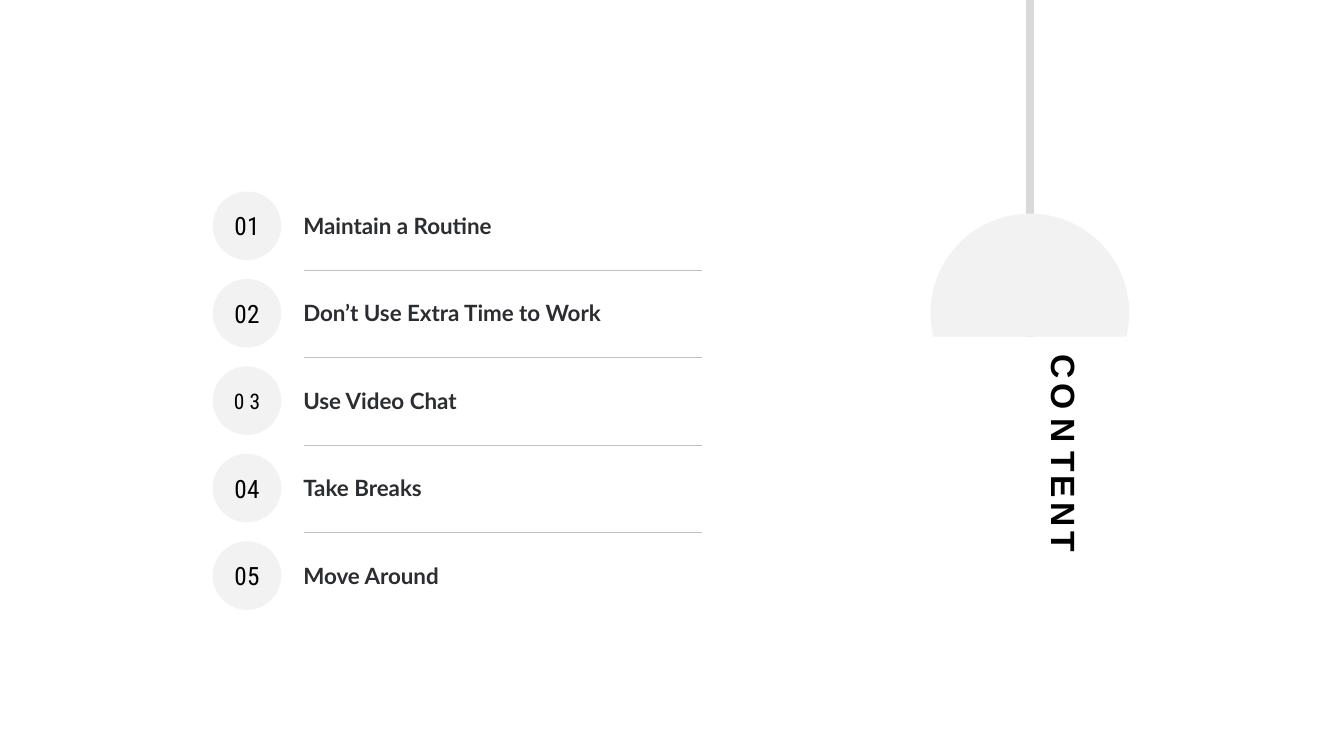
import math
from dataclasses import dataclass

import pptx
import pptx.dml.color
import pptx.enum.shapes
import pptx.enum.text
import pptx.oxml.ns
import pptx.util
from lxml import etree

Inches = pptx.util.Inches
Pt = pptx.util.Pt
RGBColor = pptx.dml.color.RGBColor
Shape = pptx.enum.shapes.MSO_SHAPE
Align = pptx.enum.text.PP_ALIGN
Anchor = pptx.enum.text.MSO_ANCHOR
Fit = pptx.enum.text.MSO_AUTO_SIZE

BLACK = RGBColor(0x00, 0x00, 0x00)
INK = RGBColor(0x2C, 0x2D, 0x30)
PALE = RGBColor(0xF2, 0xF2, 0xF2)
ROD = RGBColor(0xD9, 0xD9, 0xD9)
RULE = RGBColor(0xBF, 0xBF, 0xBF)

TOP = 1.9
PITCH = (5.37 - TOP) / 4
DISC = 0.68
LAMP_X, LAMP_TOP, LAMP_D, LAMP_END = 9.23, 2.12, 1.97, 3.34

HEAD = {"name": "Arial", "size": Pt(24), "bold": True}
LABEL = {"name": "Lato", "size": Pt(16), "bold": True}


@dataclass
class Item:
    num: tuple[str, str]
    text: str
    size: float = 18


ITEMS = [
    Item(("0", "1"), "Maintain a Routine"),
    Item(("0", "2"), "Don’t Use Extra Time to Work"),
    Item(("0 ", "3"), "Use Video Chat", 15.3),
    Item(("0", "4"), "Take Breaks"),
    Item(("0", "5"), "Move Around"),
]


def add_run(para, text: str, style: dict, color: RGBColor, gap: int = 0) -> None:
    run = para.add_run()
    run.text = text
    for key, value in style.items():
        setattr(run.font, key, value)
    run.font.color.rgb = color
    if gap:
        run.font._element.set("spc", str(gap))


def add_parts(para, parts: tuple, style: dict, gap: int = 0) -> None:
    """Set the parts in one line with a hair space of 1 pt between them."""
    for spot, part in enumerate(parts):
        if spot:
            add_run(para, " ", style | {"size": Pt(1)}, BLACK, gap)
        add_run(para, part, style, BLACK, gap)


def add_form(slide, kind, left: float, top: float, width: float,
             height: float, color: RGBColor):
    form = slide.shapes.add_shape(
        kind, Inches(left), Inches(top), Inches(width), Inches(height))
    form.shadow.inherit = False
    form.fill.solid()
    form.fill.fore_color.rgb = color
    form.line.fill.background()
    return form


def add_lamp(slide) -> None:
    mid = LAMP_X + LAMP_D / 2
    add_form(slide, Shape.RECTANGLE, mid - 0.04, 0, 0.08, LAMP_END, ROD)
    shade = add_form(slide, Shape.CHORD, LAMP_X, LAMP_TOP, LAMP_D, LAMP_D, PALE)
    # Level cut: angles in 60000ths of a degree, adjustments in 100000ths
    drop = LAMP_END - LAMP_TOP - LAMP_D / 2
    dip = math.degrees(math.asin(drop / (LAMP_D / 2)))
    for spot, turn in enumerate((180 - dip, dip)):
        shade.adjustments[spot] = turn * 0.6


def add_title(slide) -> None:
    title = slide.shapes.title
    place = {"left": 10.25, "top": 3.47, "width": 0.61, "height": 2.16}
    for key, value in place.items():
        setattr(title, key, Inches(value))
    frame = title.text_frame
    for key, value in {"auto_size": Fit.NONE, "word_wrap": True,
                       "vertical_anchor": Anchor.TOP}.items():
        setattr(frame, key, value)
    frame._txBody.bodyPr.set("vert", "eaVert")
    para = frame.paragraphs[0]
    para.alignment = Align.LEFT
    add_parts(para, ("CO", "N", "TENT"), HEAD, 300)


def add_item(slide, item: Item, top: float) -> None:
    disc = add_form(slide, Shape.OVAL, 2.11, top, DISC, DISC, PALE)
    frame = disc.text_frame
    frame.word_wrap = False
    frame.vertical_anchor = Anchor.MIDDLE
    para = frame.paragraphs[0]
    para.alignment = Align.CENTER
    add_parts(para, item.num, {"name": "Roboto Condensed", "size": Pt(item.size)})

    box = slide.shapes.add_textbox(
        Inches(2.91), Inches(top + 0.1), Inches(5.09), Inches(0.49))
    box.text_frame.word_wrap = True
    para = box.text_frame.paragraphs[0]
    para.line_spacing = 1.2
    add_run(para, item.text, LABEL, INK)


def add_rule(slide, y: float) -> None:
    rule = slide.shapes.add_connector(
        pptx.enum.shapes.MSO_CONNECTOR.STRAIGHT,
        Inches(3.02), Inches(y), Inches(6.96), Inches(y))
    rule.line.color.rgb = RULE
    rule.line.width = Pt(0.25)
    etree.SubElement(rule._element.spPr, pptx.oxml.ns.qn("a:effectLst"))


def main() -> None:
    deck = pptx.Presentation()
    deck.slide_width = Inches(13.33)
    deck.slide_height = Inches(7.5)
    slide = deck.slides.add_slide(deck.slide_layouts[5])

    # Lamp and heading
    add_lamp(slide)
    add_title(slide)

    # Numbered list with rules between the rows
    for row, item in enumerate(ITEMS):
        top = TOP + row * PITCH
        add_item(slide, item, top)
        if row:
            add_rule(slide, top - 0.09)

    deck.save("out.pptx")


if __name__ == "__main__":
    main()
